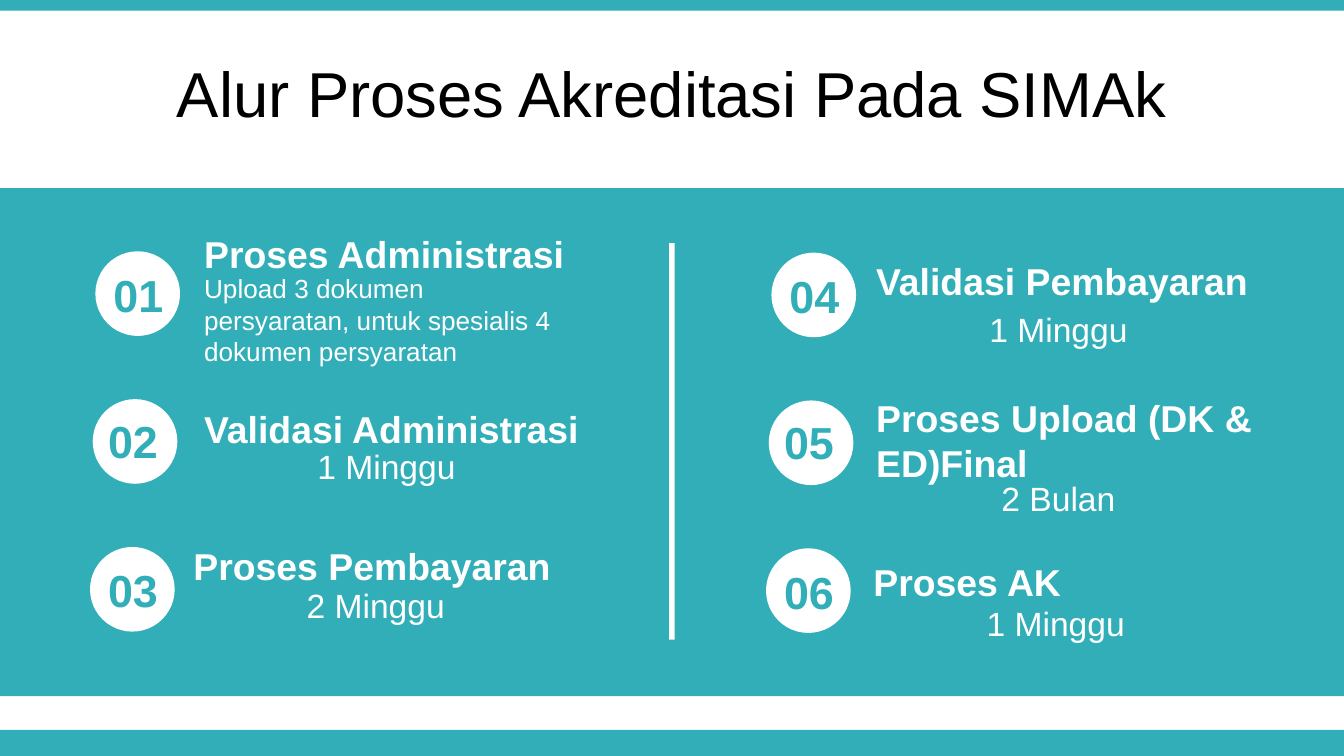
from dataclasses import dataclass
from typing import Any

from pptx import Presentation
from pptx.dml.color import RGBColor
from pptx.enum.shapes import MSO_SHAPE
from pptx.enum.text import MSO_ANCHOR, MSO_AUTO_SIZE, PP_ALIGN
from pptx.util import Inches, Pt


@dataclass(frozen=True)
class Theme:
    font: str = "Arial"
    teal: str = "32AEB8"
    white: str = "FFFFFF"
    black: str = "000000"
    title_size: int = 34
    number_size: int = 24
    heading_size: int = 20
    duration_size: int = 18
    detail_size: int = 14


@dataclass(frozen=True)
class Area:
    left: float
    top: float
    width: float
    height: float

    def lengths(self) -> list[int]:
        return [Inches(value) for value in (self.left, self.top, self.width, self.height)]


@dataclass(frozen=True)
class Step:
    heading: str
    caption: str
    label_left: float
    heading_top: float
    caption_top: float
    heading_width: float = 3.48
    heading_height: float = 0.44
    detailed: bool = False


THEME = Theme()
SLIDE_WIDTH = 10
SLIDE_HEIGHT = SLIDE_WIDTH * 9 / 16
COLUMN_PITCH, ROW_PITCH, ROW_SHIFT = 5.03, 1.1, 0.02
FIRST_LEFT, FIRST_TOP, CIRCLE_SIZE = 0.71, 1.87, 0.63
NUMBER_LEFTS = (0.68, 0.64, 0.64)
NUMBER_TOPS = (1.94, 3.03, 4.14)
CAPTION_WIDTH = 2.91
ROWS = len(NUMBER_TOPS)

STEPS = (
    Step("Proses Administrasi", "Upload 3 dokumen persyaratan, untuk spesialis 4 dokumen persyaratan",
         1.42, 1.67, 1.98, heading_width=2.91, detailed=True),
    Step("Validasi Administrasi", "1 Minggu", 1.42, 2.97, 3.27),
    Step("Proses Pembayaran", "2 Minggu", 1.34, 3.99, 4.3),
    Step("Validasi Pembayaran", "1 Minggu", 6.42, 1.87, 2.25),
    Step("Proses Upload (DK & ED)Final", "2 Bulan", 6.42, 2.89, 3.51,
         heading_width=3.58, heading_height=0.77),
    Step("Proses AK", "1 Minggu", 6.4, 4.11, 4.44),
)


def add_filled(shapes: Any, kind: MSO_SHAPE, area: Area, color: str) -> None:
    shape = shapes.add_shape(kind, *area.lengths())
    shape.shadow.inherit = False
    shape.fill.solid()
    shape.fill.fore_color.rgb = RGBColor.from_string(color)
    shape.line.fill.background()


def write_text(box: Any, text: str, size: int, color: str, bold: bool = False,
               alignment: PP_ALIGN = PP_ALIGN.LEFT) -> None:
    para = box.text_frame.paragraphs[0]
    para.alignment = alignment
    span = para.add_run()
    span.text = text
    formats = {"name": THEME.font, "size": Pt(size), "bold": bold}
    for attribute, value in formats.items():
        setattr(span.font, attribute, value)
    span.font.color.rgb = RGBColor.from_string(color)


def add_text(shapes: Any, area: Area, text: str, size: int, color: str,
             bold: bool = False, alignment: PP_ALIGN = PP_ALIGN.LEFT) -> None:
    box = shapes.add_textbox(*area.lengths())
    frame_formats = {"word_wrap": True, "auto_size": MSO_AUTO_SIZE.SHAPE_TO_FIT_TEXT}
    for attribute, value in frame_formats.items():
        setattr(box.text_frame, attribute, value)
    write_text(box, text, size, color, bold, alignment)


def add_title(slide: Any, text: str) -> None:
    title = slide.shapes.title
    places = zip(("left", "top", "width", "height"), Area(0, 0.37, SLIDE_WIDTH, 0.63).lengths())
    for attribute, value in places:
        setattr(title, attribute, value)
    frame_formats = {"word_wrap": True, "auto_size": MSO_AUTO_SIZE.NONE,
                     "vertical_anchor": MSO_ANCHOR.MIDDLE}
    for attribute, value in frame_formats.items():
        setattr(title.text_frame, attribute, value)
    write_text(title, text, THEME.title_size, THEME.black, alignment=PP_ALIGN.CENTER)


def add_step(slide: Any, index: int, step: Step) -> None:
    column, row = divmod(index, ROWS)
    circle = Area(FIRST_LEFT + column * COLUMN_PITCH - row * ROW_SHIFT,
                  FIRST_TOP + column * 0.01 + row * ROW_PITCH, CIRCLE_SIZE, CIRCLE_SIZE)
    add_filled(slide.shapes, MSO_SHAPE.OVAL, circle, THEME.white)
    number = Area(NUMBER_LEFTS[row] + column * COLUMN_PITCH,
                  NUMBER_TOPS[row] + column * 0.01, 0.7, 0.5)
    add_text(slide.shapes, number, f"{index + 1:02}", THEME.number_size, THEME.teal,
             True, PP_ALIGN.CENTER)

    label = slide.shapes.add_group_shape().shapes
    caption_height = 0.81 if step.detailed else 0.4
    caption_size = THEME.detail_size if step.detailed else THEME.duration_size
    caption_alignment = PP_ALIGN.LEFT if step.detailed else PP_ALIGN.CENTER
    add_text(label, Area(step.label_left, step.caption_top, CAPTION_WIDTH, caption_height),
             step.caption, caption_size, THEME.white, alignment=caption_alignment)
    add_text(label, Area(step.label_left, step.heading_top, step.heading_width, step.heading_height),
             step.heading, THEME.heading_size, THEME.white, True)


def main() -> None:
    deck = Presentation()
    deck.slide_width, deck.slide_height = Inches(SLIDE_WIDTH), Inches(SLIDE_HEIGHT)
    slide = deck.slides.add_slide(deck.slide_layouts[5])
    add_title(slide, "Alur Proses Akreditasi Pada SIMAk")

    for top, height in ((5.43, SLIDE_HEIGHT - 5.43), (0, 0.08), (1.4, 3.78)):
        add_filled(slide.shapes, MSO_SHAPE.RECTANGLE, Area(0, top, SLIDE_WIDTH, height), THEME.teal)
    divider = Area(SLIDE_WIDTH / 2 - 0.02, 1.81, 0.04, 2.95)
    add_filled(slide.shapes, MSO_SHAPE.RECTANGLE, divider, THEME.white)

    for index, step in enumerate(STEPS):
        add_step(slide, index, step)
    deck.save("out.pptx")


if __name__ == "__main__":
    main()
